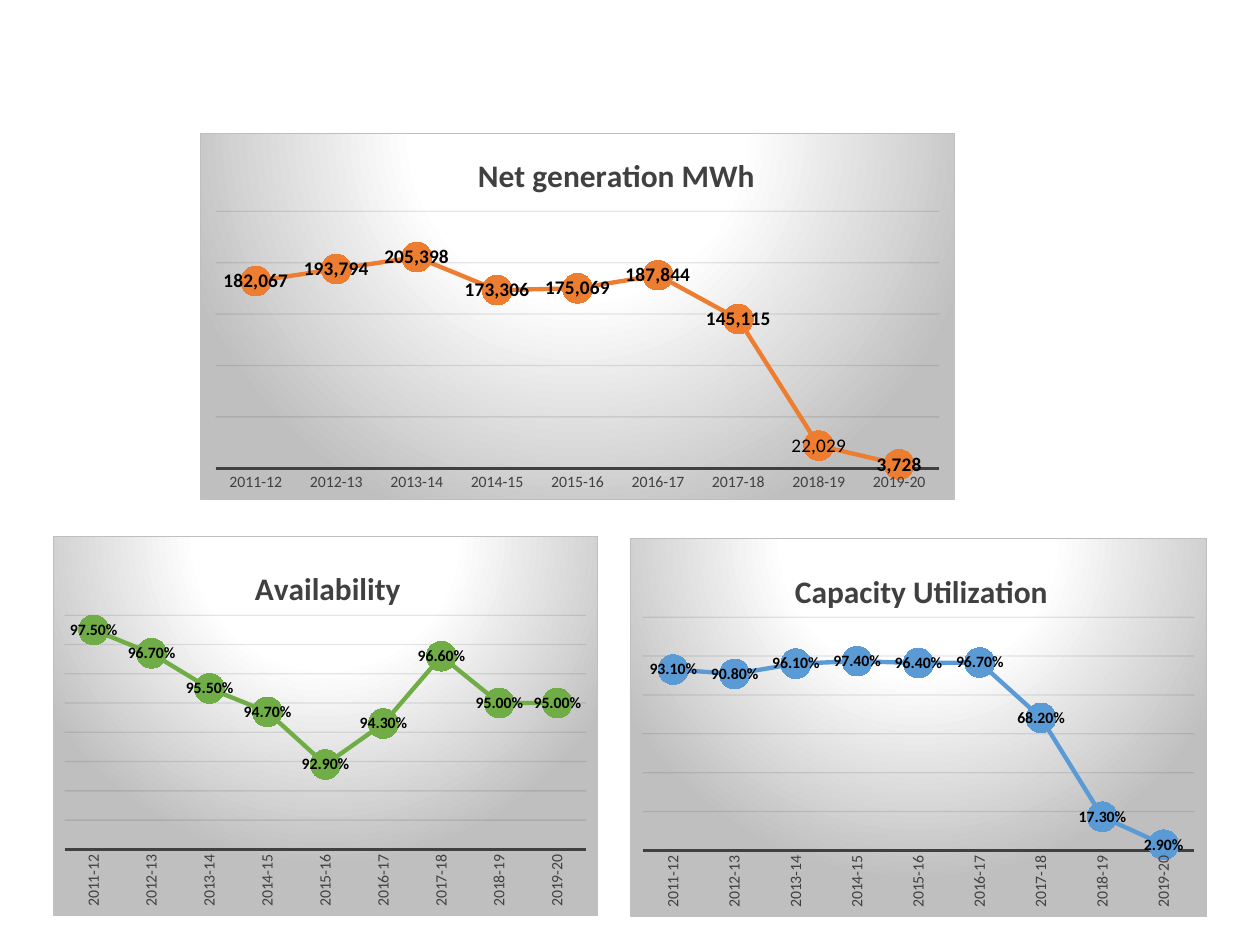
"""Build a slide with three line charts on plant generation, availability and utilization."""
from lxml.etree import SubElement
from pptx import Presentation
from pptx.chart.data import CategoryChartData
from pptx.dml.color import RGBColor
from pptx.enum.chart import XL_CHART_TYPE, XL_LABEL_POSITION, XL_MARKER_STYLE, XL_TICK_MARK
from pptx.oxml import parse_xml
from pptx.oxml.ns import nsdecls, qn
from pptx.util import Emu, Pt

PX = 914400 / 126
YEARS = [f"{year}-{year % 100 + 1}" for year in range(2011, 2020)]
BACKGROUND = f"""<c:spPr {nsdecls("c", "a")}>
  <a:gradFill><a:gsLst>
    <a:gs pos="0"><a:srgbClr val="FFFFFF"/></a:gs>
    <a:gs pos="39000"><a:srgbClr val="FFFFFF"/></a:gs>
    <a:gs pos="100000"><a:srgbClr val="BFBFBF"/></a:gs>
  </a:gsLst><a:path path="circle">
    <a:fillToRect l="50000" t="-80000" r="50000" b="180000"/>
  </a:path></a:gradFill>
  <a:ln w="9525"><a:solidFill><a:srgbClr val="BFBFBF"/></a:solidFill></a:ln>
</c:spPr>"""

CHARTS = [
    dict(title="Net generation MWh", color="ED7D31", frame=(200, 133, 755, 367),
         plot=(215, 211, 725, 258), title_at=(472, 147), scale=(0, 250000, 50000),
         number_format="#,##0", label_size=11, turn=0,
         values=[182067, 193794, 205398, 173306, 175069, 187844, 145115, 22029, 3728]),
    dict(title="Availability ", color="70AD47", frame=(53, 536, 545, 380),
         plot=(64, 615, 523, 235), title_at=(249, 560), scale=(0.9, 0.98, 0.01),
         number_format="0.00%", label_size=9, turn=-90,
         values=[0.975, 0.967, 0.955, 0.947, 0.929, 0.943, 0.966, 0.95, 0.95]),
    dict(title="Capacity Utilization ", color="5B9BD5", frame=(630, 538, 577, 379),
         plot=(642, 617, 553, 234), title_at=(789, 563), scale=(0, 1.2, 0.2),
         number_format="0.00%", label_size=9, turn=-90,
         values=[0.931, 0.908, 0.961, 0.974, 0.964, 0.967, 0.682, 0.173, 0.029]),
]


def style_font(font, size, color, bold=False):
    font.name = "Calibri"
    font.size = Pt(size)
    font.bold = bold
    font.color.rgb = RGBColor.from_string(color)


def set_layout(parent, index, frame, area):
    for old in parent.findall(qn("c:layout")):
        parent.remove(old)
    layout = parse_xml(f"<c:layout {nsdecls('c')}><c:manualLayout/></c:layout>")
    manual = layout[0]
    settings = [("xMode", "edge"), ("yMode", "edge")]
    if len(area) == 4:
        settings.insert(0, ("layoutTarget", "inner"))
    left, top, width, height = frame
    shares = [(area[0] - left) / width, (area[1] - top) / height]
    shares += [length / whole for length, whole in zip(area[2:], (width, height))]
    settings += [(name, f"{share:.4f}") for name, share in zip("xywh", shares)]
    for name, value in settings:
        SubElement(manual, qn(f"c:{name}"), val=value)
    parent.insert(index, layout)


deck = Presentation()
deck.slide_width, deck.slide_height = Emu(int(1260 * PX)), Emu(int(945 * PX))
page = deck.slides.add_slide(deck.slide_layouts[6])

for item in CHARTS:
    data = CategoryChartData(number_format=item["number_format"])
    data.categories = YEARS
    data.add_series(item["title"], item["values"])
    box = [Emu(int(length * PX)) for length in item["frame"]]
    chart = page.shapes.add_chart(XL_CHART_TYPE.LINE_MARKERS_STACKED, *box, data).chart
    style_font(chart.font, 10, "000000")
    chart.has_legend = False
    space = chart.font._element.getparent().getparent().getparent().getparent()
    space.find(qn("c:chart")).addnext(parse_xml(BACKGROUND))

    chart.has_title = True
    para = chart.chart_title.text_frame.paragraphs[0]
    span = para.add_run()
    span.text = item["title"]
    style_font(span.font, 18, "404040", True)
    chart.chart_title.include_in_layout = False
    set_layout(space.find(".//" + qn("c:title")), 1, item["frame"], item["title_at"])
    set_layout(space.find(".//" + qn("c:plotArea")), 0, item["frame"], item["plot"])

    years = chart.category_axis
    years.major_tick_mark = years.minor_tick_mark = XL_TICK_MARK.NONE
    years.format.line.color.rgb = RGBColor.from_string("404040")
    years.format.line.width = Pt(1.5)
    style_font(years.tick_labels.font, 9, "404040")
    axis_text = space.find(".//" + qn("c:catAx")).find(qn("c:txPr"))
    axis_text.find(qn("a:bodyPr")).set("rot", str(item["turn"] * 60000))

    amounts = chart.value_axis
    amounts.minimum_scale, amounts.maximum_scale, amounts.major_unit = item["scale"]
    amounts.visible = False
    amounts.has_major_gridlines = True
    grid = amounts.major_gridlines.format.line
    grid.width = Pt(0.75)
    grid.color.rgb = RGBColor.from_string("0D0D0D")
    grid_color = space.find(".//" + qn("c:majorGridlines")).find(".//" + qn("a:srgbClr"))
    SubElement(grid_color, qn("a:alpha"), val="10000")

    series = chart.plots[0].series[0]
    color = RGBColor.from_string(item["color"])
    series.smooth = False
    series.format.line.color.rgb = color
    series.format.line.width = Pt(2.5)
    series.marker.style = XL_MARKER_STYLE.CIRCLE
    series.marker.size = 17
    series.marker.format.fill.solid()
    series.marker.format.fill.fore_color.rgb = color
    series.marker.format.line.fill.background()
    chart.plots[0].vary_by_categories = False

    labels = series.data_labels
    labels.show_value = True
    labels.position = XL_LABEL_POSITION.CENTER
    labels.number_format = item["number_format"]
    labels.number_format_is_linked = False
    style_font(labels.font, item["label_size"], "000000", True)
    if item["title"].startswith("Net"):
        label = series.points[7].data_label
        span = label.text_frame.paragraphs[0].add_run()
        span.text = "22,029"
        style_font(span.font, 11, "000000")
        label.position = XL_LABEL_POSITION.CENTER

deck.save("out.pptx")
